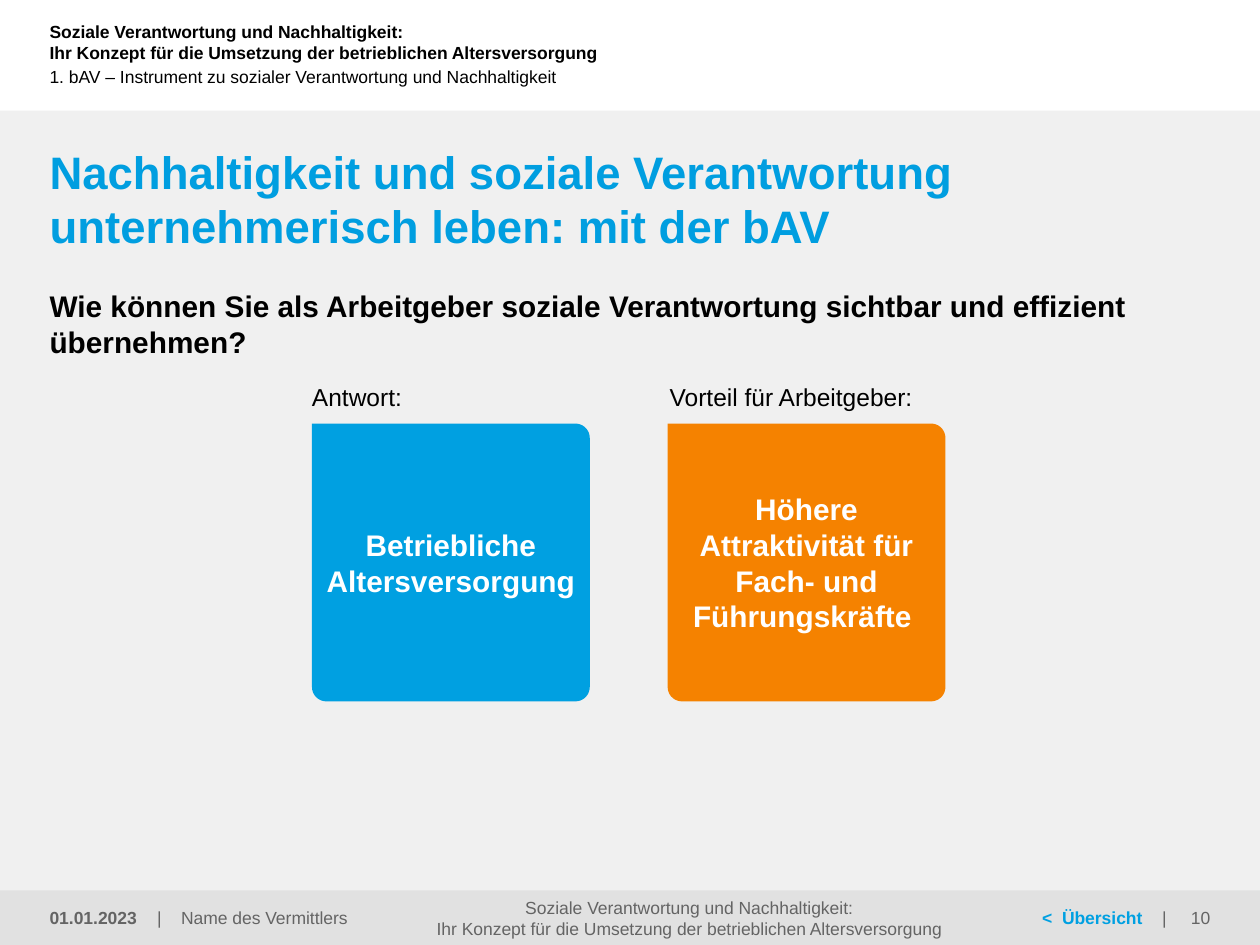
import math
from dataclasses import dataclass

from lxml import etree
from pptx import Presentation
from pptx import util as u
from pptx.dml.color import RGBColor
from pptx.enum import shapes, text
from pptx.oxml.ns import qn

TOP, MIDDLE, BOTTOM = (text.MSO_ANCHOR.TOP, text.MSO_ANCHOR.MIDDLE,
                       text.MSO_ANCHOR.BOTTOM)
LEFT, CENTER, RIGHT = text.PP_ALIGN.LEFT, text.PP_ALIGN.CENTER, text.PP_ALIGN.RIGHT


@dataclass(frozen=True)
class Theme:
    font: str = "Arial"
    black: str = "000000"
    white: str = "FFFFFF"
    grey: str = "646464"
    panel: str = "F0F0F0"
    footer: str = "E1E1E1"
    title_blue: str = "009EE0"
    blue: str = "00A0E1"
    orange: str = "F58200"
    small: float = 10
    label: float = 14
    body: float = 17
    title: float = 26


@dataclass(frozen=True)
class Run:
    text: str
    size: float
    color: str
    bold: bool = False


class Builder:
    """Holds the theme and the slide being filled; lengths are in cm."""

    def __init__(self, theme, slide):
        self.theme = theme
        self.slide = slide

    def paint(self, sp, color):
        sp.shadow.inherit = False
        sp.fill.solid()
        sp.fill.fore_color.rgb = RGBColor.from_string(color)
        sp.line.fill.background()

    def band(self, top, height, color):
        sp = self.slide.shapes.add_shape(
            shapes.MSO_SHAPE.RECTANGLE, 0, u.Cm(top), u.Cm(25.4), u.Cm(height))
        self.paint(sp, color)

    def set_text(self, sp, lines, align=LEFT, anchor=TOP, insets=(0, 0, 0, 0), tabs=()):
        """Fill a shape; each entry of lines is one paragraph's list of runs."""
        tf = sp.text_frame
        tf.word_wrap = True
        tf.vertical_anchor = anchor
        (tf.margin_left, tf.margin_top,
         tf.margin_right, tf.margin_bottom) = map(u.Cm, insets)
        for i, runs in enumerate(lines):
            p = tf.add_paragraph() if i else tf.paragraphs[0]
            p.alignment = align
            if tabs:
                tab_list = etree.SubElement(p._p.get_or_add_pPr(), qn("a:tabLst"))
                for pos in tabs:
                    etree.SubElement(tab_list, qn("a:tab"),
                                     pos=str(u.Cm(pos)), algn="l")
            for item in runs:
                r = p.add_run()
                r.text = item.text
                r.font.name = self.theme.font
                r.font.size = u.Pt(item.size)
                r.font.bold = item.bold
                r.font.color.rgb = RGBColor.from_string(item.color)

    def label(self, left, top, width, height, lines, **style):
        sp = self.slide.shapes.add_textbox(*map(u.Cm, (left, top, width, height)))
        self.set_text(sp, lines, **style)

    def tile(self, left, top, side, color, runs, radius=0.29):
        """Square with three rounded corners and a sharp top left one."""
        near, far = radius, side - radius
        corners = [(far, near, -90), (far, far, 0), (near, far, 90)]
        points = [(left + cx + radius * math.cos(math.radians(start + step)),
                   top + cy + radius * math.sin(math.radians(start + step)))
                  for cx, cy, start in corners for step in range(0, 91, 10)]
        outline = self.slide.shapes.build_freeform(u.Cm(left), u.Cm(top))
        outline.add_line_segments([(u.Cm(x), u.Cm(y)) for x, y in points], close=True)
        sp = outline.convert_to_shape()
        self.paint(sp, color)
        self.set_text(sp, [runs], align=CENTER, anchor=MIDDLE,
                      insets=(0.25, 0.13, 0.25, 0.13))


def main():
    prs = Presentation()
    prs.slide_width, prs.slide_height = u.Cm(25.4), u.Cm(19.05)
    t = Theme()
    b = Builder(t, prs.slides.add_slide(prs.slide_layouts[6]))
    margin, content_width = 1, 23.4
    panel_top, footer_top, footer_height = 2.23, 17.95, 1.1
    b.band(panel_top, 19.05 - panel_top, t.panel)
    b.band(footer_top, footer_height, t.footer)

    topic = ["Soziale Verantwortung und Nachhaltigkeit:",
             "Ihr Konzept für die Umsetzung der betrieblichen Altersversorgung"]
    b.label(margin, 0, 16.5, 1.7,
            [[Run(line, t.small, t.black, True)] for line in topic], anchor=MIDDLE)
    b.label(margin, 0.85, 17.1, 1.4,
            [[Run("1. bAV – Instrument zu sozialer Verantwortung und Nachhaltigkeit",
                  t.small, t.black)]], anchor=MIDDLE)
    b.label(margin, 2.9, content_width, 1.4,
            [[Run("Nachhaltigkeit und soziale Verantwortung unternehmerisch leben: "
                  "mit der bAV", t.title, t.title_blue, True)]])
    b.label(margin, 5.8, content_width, 1.45,
            [[Run("Wie können Sie als Arbeitgeber soziale Verantwortung sichtbar "
                  "und effizient übernehmen?", t.body, t.black, True)]])

    side, tile_top = 5.6, 8.54
    tiles = [
        (6.29, 6.29, t.blue, "Antwort:", "Betriebliche Altersversorgung "),
        (13.46, 13.5, t.orange, "Vorteil für Arbeitgeber:",
         "Höhere Attraktivität für Fach- und Führungskräfte "),
    ]
    for left, label_left, color, heading, message in tiles:
        b.tile(left, tile_top, side, color, [Run(message, t.body, t.white, True)])
        b.label(label_left, 7.7, side, 0.6,
                [[Run(heading, t.label, t.black)]], anchor=BOTTOM)

    def footer(left, width, lines, **style):
        b.label(left, footer_top, width, footer_height, lines, anchor=MIDDLE, **style)

    footer(margin, 2.1, [[Run("01.01.2023", t.small, t.grey, True)]])
    footer(3.17, 6.15, [[Run("|\tName des Vermittlers", t.small, t.grey)]], tabs=[0.48])
    footer(8.38, 11.02, [[Run(line, t.small, t.grey)] for line in topic], align=CENTER)
    footer(21.01, 2.8, [[Run("<\tÜbersicht\t", t.small, t.blue, True),
                         Run("|", t.small, t.grey)]], tabs=[0.4, 2.42])
    footer(23.4, 1, [[Run("10", t.small, t.grey)]], align=RIGHT)
    prs.save("out.pptx")


if __name__ == "__main__":
    main()
